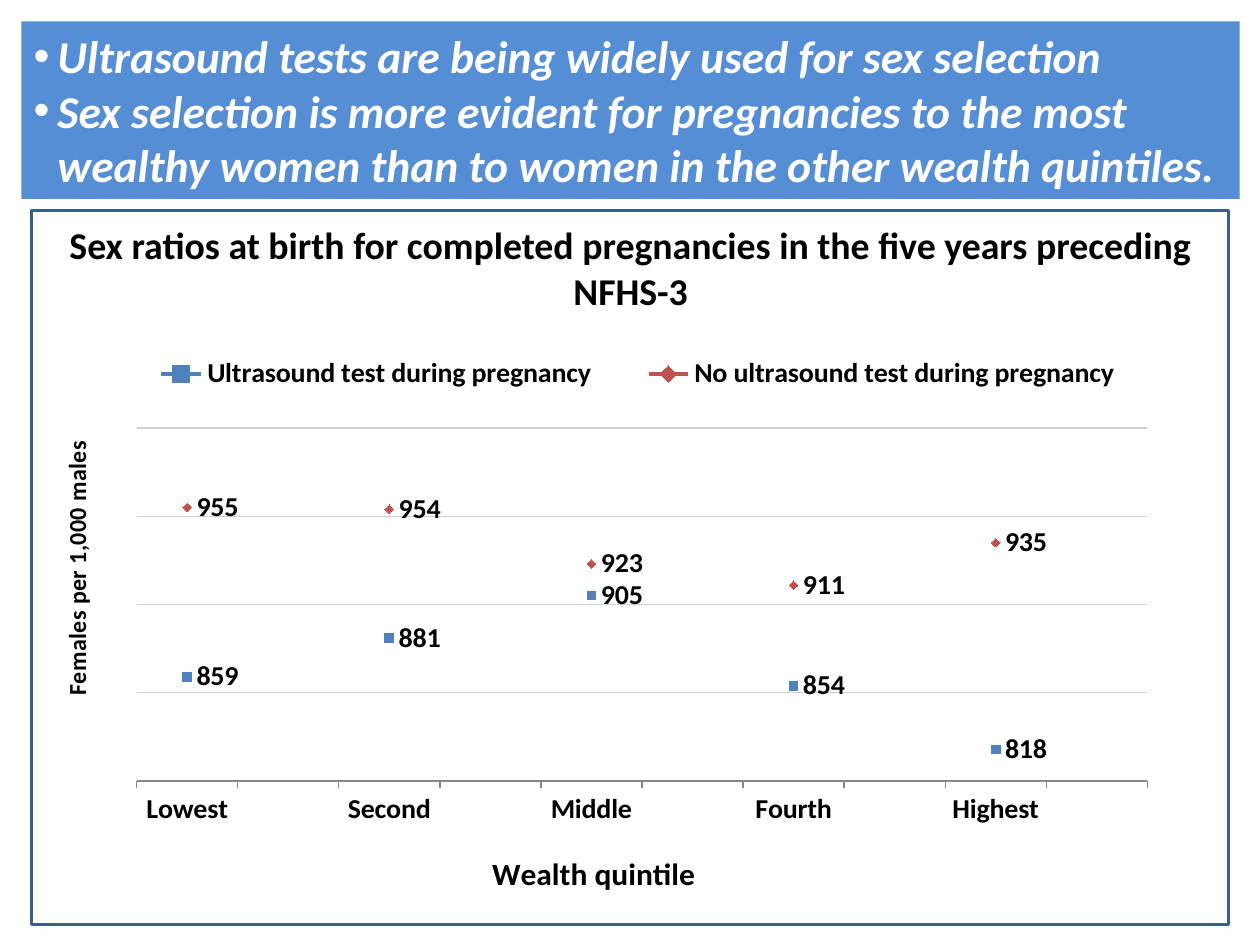
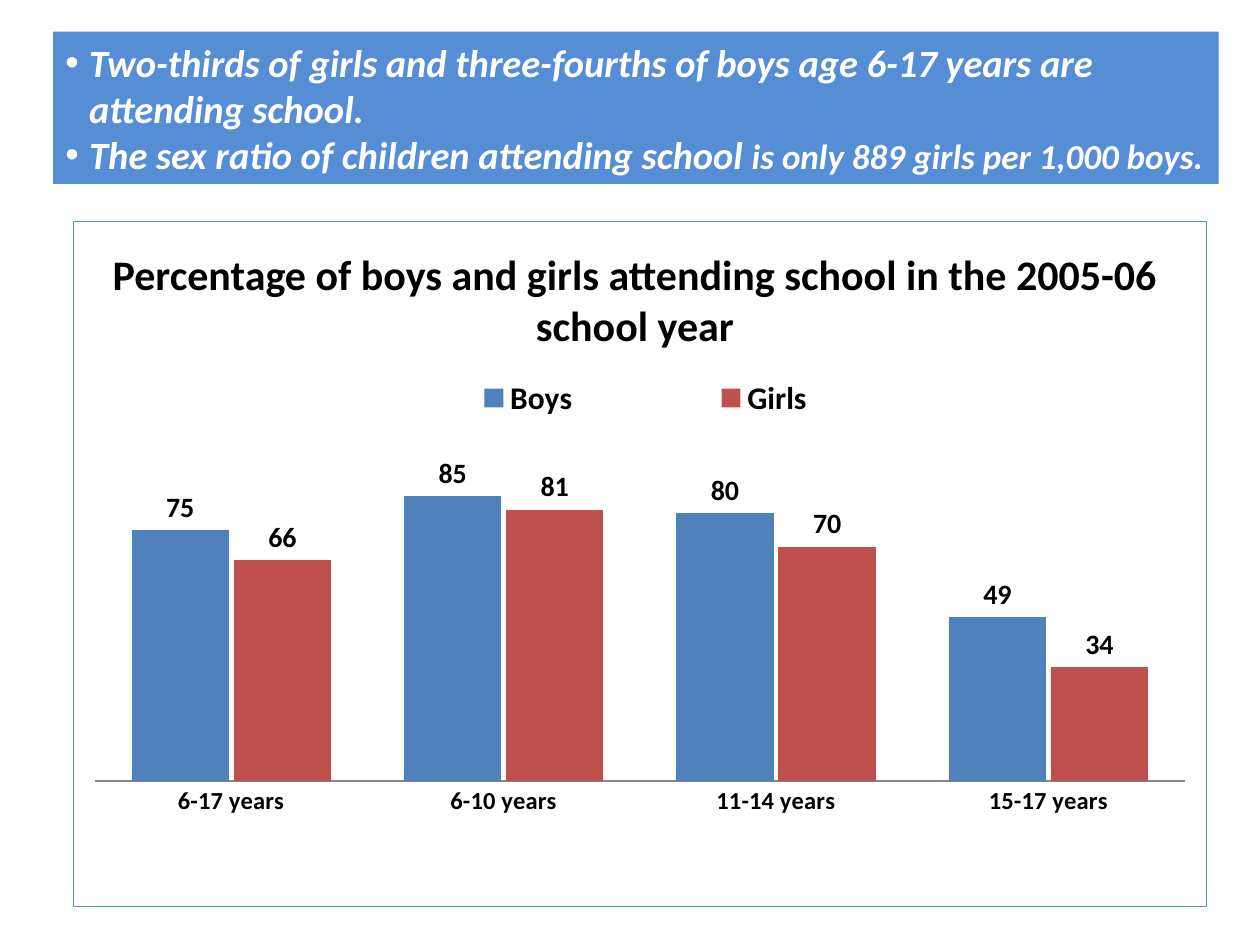
import dataclasses
import pptx
import pptx.chart.data
import pptx.dml.color
import pptx.enum.chart
import pptx.enum.shapes
import pptx.enum.text
import pptx.oxml
import pptx.oxml.ns
import pptx.util

Cm, Pt = pptx.util.Cm, pptx.util.Pt
Kind = pptx.enum.chart.XL_CHART_TYPE
Spot = pptx.enum.chart.XL_LEGEND_POSITION
Label = pptx.enum.chart.XL_LABEL_POSITION
Tick = pptx.enum.chart.XL_TICK_MARK
Mark = pptx.enum.chart.XL_MARKER_STYLE
Text = pptx.enum.text


@dataclasses.dataclass(frozen=True)
class Theme:
    font: str = "Calibri"
    ink: str = "000000"
    white: str = "FFFFFF"
    band: str = "558ED5"
    edge: str = "3A5F8C"
    grid: str = "D0D0D0"
    axis: str = "868686"
    series: tuple = ("4F81BD", "C0504D")
    base: float = 10
    tick: float = 14
    label: float = 16
    name: float = 18
    note: float = 20


def rgb(code):
    return pptx.dml.color.RGBColor.from_string(code)


def put(item, values):
    for key, value in values.items():
        setattr(item, key, value)


def paint(fill, code):
    fill.solid()
    fill.fore_color.rgb = rgb(code)


def stroke(line, code, width):
    paint(line.fill, code)
    line.width = Pt(width)


def place(node, box, index, inner=False):
    """Give a chart part a fixed place, in fractions of the chart."""
    for old in node.xpath("c:layout"):
        node.remove(old)
    tags = [("layoutTarget", "inner")] if inner else []
    tags += [("xMode", "edge"), ("yMode", "edge")]
    tags += zip("xywh", box)
    rows = "".join(f'<c:{tag} val="{value}"/>' for tag, value in tags)
    names = pptx.oxml.ns.nsdecls("c")
    node.insert(index, pptx.oxml.parse_xml(
        f"<c:layout {names}><c:manualLayout>{rows}</c:manualLayout></c:layout>"))


class Deck:
    """Holds the style and the current slide."""

    def __init__(self, theme):
        self.theme = theme
        self.show = pptx.Presentation()
        put(self.show, {"slide_width": Cm(25.4), "slide_height": Cm(19.05)})

    def page(self):
        self.slide = self.show.slides.add_slide(self.show.slide_layouts[6])

    def style(self, font, size, code=None, **more):
        put(font, {"name": self.theme.font, "size": Pt(size), "bold": True, **more})
        paint(font.fill, code or self.theme.ink)

    def rect(self, box, fill):
        shape = self.slide.shapes.add_shape(
            pptx.enum.shapes.MSO_SHAPE.RECTANGLE, *map(Cm, box))
        shape.shadow.inherit = False
        paint(shape.fill, fill)
        shape.line.fill.background()
        return shape

    def frame(self, box):
        stroke(self.rect(box, self.theme.white).line, self.theme.edge, 2)

    def title(self, box, text, size):
        frame = self.slide.shapes.add_textbox(*map(Cm, box)).text_frame
        put(frame, {"word_wrap": True, "vertical_anchor": Text.MSO_ANCHOR.MIDDLE})
        para = frame.paragraphs[0]
        para.alignment = Text.PP_ALIGN.CENTER
        run = para.add_run()
        run.text = text
        self.style(run.font, size)

    def banner(self, box, points, size):
        """Each point is a list of (text, size) runs; size None is the default."""
        frame = self.rect(box, self.theme.band).text_frame
        put(frame, {"word_wrap": True, "auto_size": Text.MSO_AUTO_SIZE.SHAPE_TO_FIT_TEXT})
        indent = Cm(0.48)
        names = pptx.oxml.ns.nsdecls("a")
        for index, point in enumerate(points):
            para = frame.add_paragraph() if index else frame.paragraphs[0]
            para.alignment = Text.PP_ALIGN.LEFT
            props = para._p.get_or_add_pPr()
            props.set("marL", str(indent))
            props.set("indent", str(-indent))
            for xml in (f'<a:buFont {names} typeface="Arial"/>',
                        f'<a:buChar {names} char="•"/>'):
                props.append(pptx.oxml.parse_xml(xml))
            for text, own in point:
                run = para.add_run()
                run.text = text
                self.style(run.font, own or size, self.theme.white, italic=True)

    def chart(self, kind, box, cats, rows, plot, legend, spot, key, tick):
        """Add a chart with a legend, value labels and a hidden value axis."""
        look = self.theme
        data = pptx.chart.data.CategoryChartData()
        data.categories = cats
        for name, values in rows:
            data.add_series(name, values)
        chart = self.slide.shapes.add_chart(kind, *map(Cm, box), data).chart
        put(chart, {"has_title": False, "has_legend": True})
        self.style(chart.font, look.base, bold=False)
        put(chart.legend, {"position": spot, "include_in_layout": False})
        self.style(chart.legend.font, key)
        chart.plots[0].vary_by_categories = False

        # Axes
        put(chart.value_axis, {"visible": False, "has_major_gridlines": False})
        axis = chart.category_axis
        put(axis, {"major_tick_mark": Tick.NONE, "minor_tick_mark": Tick.NONE})
        stroke(axis.format.line, look.axis, 0.75)
        self.style(axis.tick_labels.font, tick)

        # Value labels
        for series in chart.plots[0].series:
            series.data_labels.show_value = True
            self.style(series.data_labels.font, look.label)

        root = chart.element
        place(root.xpath("c:chart/c:plotArea")[0], plot, 0, inner=True)
        place(root.xpath("c:chart/c:legend")[0], legend, 1)
        return chart

    def name(self, chart, axis, text, size, spot, turn=0):
        """Give an axis a title at a fixed place."""
        frame = axis.axis_title.text_frame
        frame.text = text
        self.style(frame.paragraphs[0].runs[0].font, size)
        tag = "valAx" if axis is chart.value_axis or turn else "catAx"
        node = chart.element.xpath(f"c:chart/c:plotArea/c:{tag}/c:title")[0]
        put_turn = node.xpath("c:tx/c:rich/a:bodyPr")[0]
        put_turn.set("rot", str(turn * 60000))
        put_turn.set("vert", "horz")
        place(node, spot, 1)

    def points(self, *args, **more):
        look = self.theme
        chart = self.chart(Kind.LINE_MARKERS, *args, **more)
        axis = chart.value_axis
        put(axis, {"minimum_scale": 800, "maximum_scale": 1000,
                   "major_unit": 50, "has_major_gridlines": True})
        stroke(axis.major_gridlines.format.line, look.grid, 0.75)
        chart.category_axis.major_tick_mark = Tick.OUTSIDE
        marks = (Mark.SQUARE, Mark.DIAMOND)
        for series, code, mark in zip(chart.plots[0].series, look.series, marks):
            series.smooth = False
            stroke(series.format.line, code, 2.25)
            put(series.marker, {"style": mark, "size": 5})
            paint(series.marker.format.fill, code)
            stroke(series.marker.format.line, code, 0.75)
            series.data_labels.position = Label.RIGHT
        return chart

    def bars(self, *args, **more):
        look = self.theme
        chart = self.chart(Kind.COLUMN_CLUSTERED, *args, **more)
        put(chart.value_axis, {"minimum_scale": 0, "maximum_scale": 90})
        put(chart.plots[0], {"gap_width": 75, "overlap": -5})
        for series, code in zip(chart.plots[0].series, look.series):
            paint(series.format.fill, code)
            series.data_labels.position = Label.OUTSIDE_END
        return chart

    def border(self, chart):
        names = pptx.oxml.ns.nsdecls("c", "a")
        chart.element.xpath("c:chart")[0].addnext(pptx.oxml.parse_xml(
            f'<c:spPr {names}><a:noFill/><a:ln w="{Pt(0.75)}"><a:solidFill>'
            f'<a:srgbClr val="{self.theme.band}"/></a:solidFill></a:ln></c:spPr>'))


def ratios(deck):
    look = deck.theme
    deck.page()
    deck.frame((0.64, 4.24, 24.13, 14.4))
    deck.title((1.07, 4.44, 23.29, 1.9),
               "Sex ratios at birth for completed pregnancies in the five years "
               "preceding NFHS-3", 21.6)

    # Every second category is an unnamed gap
    def spread(values, gap):
        return [item for value in values for item in (value, gap)]

    cats = spread(["Lowest", "Second", "Middle", "Fourth", "Highest"], "")
    rows = [("Ultrasound test during pregnancy",
             spread([859, 881, 905, 854, 818], None)),
            ("No ultrasound test during pregnancy",
             spread([955, 954, 923, 911, 935], None))]
    chart = deck.points((0.64, 5.92, 23.5, 12.27), cats, rows,
                        plot=(0.09, 0.226, 0.867, 0.594),
                        legend=(0.07, 0.1, 0.9, 0.07), spot=Spot.RIGHT,
                        key=look.label, tick=look.label)
    deck.name(chart, chart.category_axis, "Wealth quintile", look.name, (0.39, 0.93))
    deck.name(chart, chart.value_axis, "Females per 1,000 males", look.tick,
              (0.02, 0.25), turn=-90)
    deck.banner((0.43, 0.43, 24.56, 3.58), [
        [("Ultrasound tests are being widely used for sex selection", None)],
        [("Sex selection is more evident for pregnancies to the most wealthy "
          "women than to women in the other wealth quintiles.", None)]], 26)


def school(deck):
    look = deck.theme
    deck.page()
    deck.title((1.27, 5.08, 23.06, 1.9),
               "Percentage of boys and girls attending school in the 2005-06 "
               "school year", 24)
    deck.banner((1.07, 0.64, 23.5, 3.07), [
        [("Two-thirds of girls and three-fourths of boys age 6-17 years are "
          "attending school.", None)],
        [("The sex ratio of children attending school ", None),
         ("is only 889 girls per 1,000 boys.", look.note)]], 22)
    cats = [f"{ages} years" for ages in ("6-17", "6-10", "11-14", "15-17")]
    rows = [("Boys", [75, 85, 80, 49]), ("Girls", [66, 81, 70, 34])]
    chart = deck.bars((1.47, 4.45, 22.86, 13.84), cats, rows,
                      plot=(0.019, 0.377, 0.962, 0.44),
                      legend=(0.24, 0.23, 0.53, 0.05), spot=Spot.TOP,
                      key=look.name, tick=look.tick)
    deck.border(chart)


def main():
    deck = Deck(Theme())
    ratios(deck)
    school(deck)
    deck.show.save("out.pptx")


if __name__ == "__main__":
    main()
